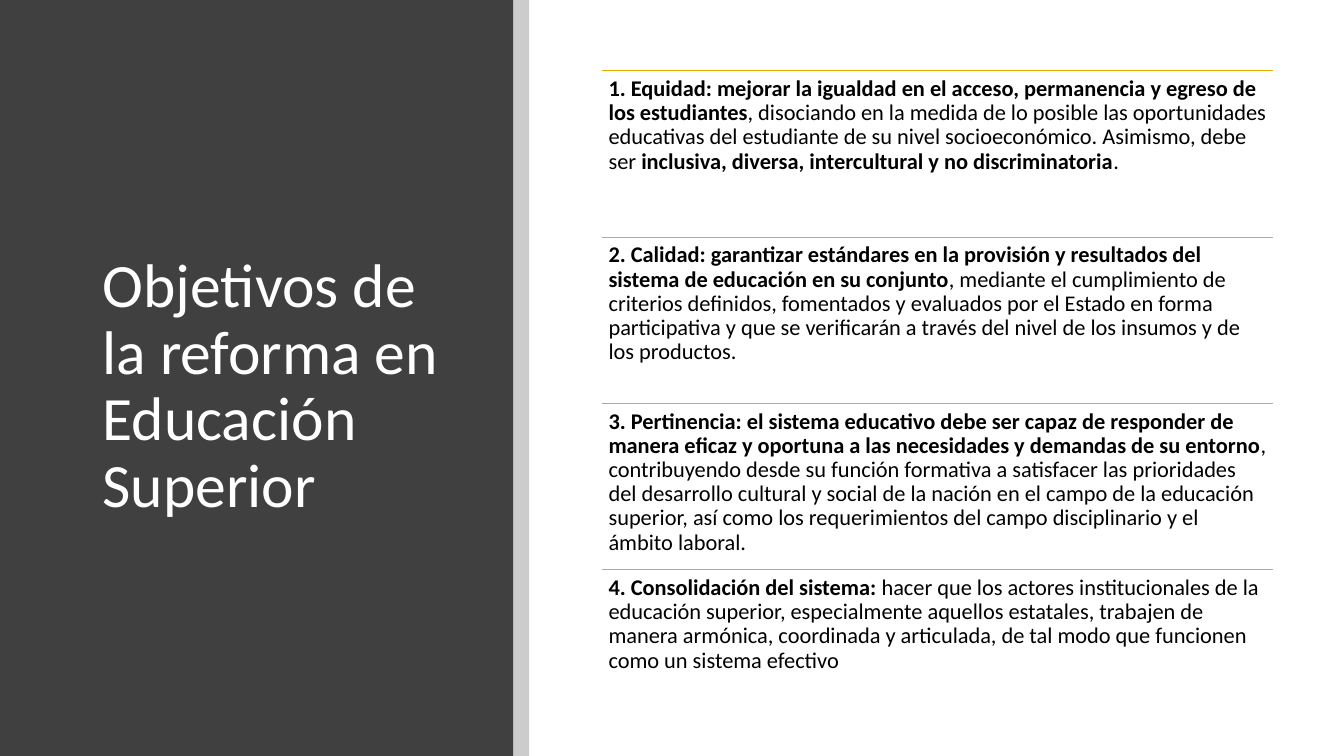
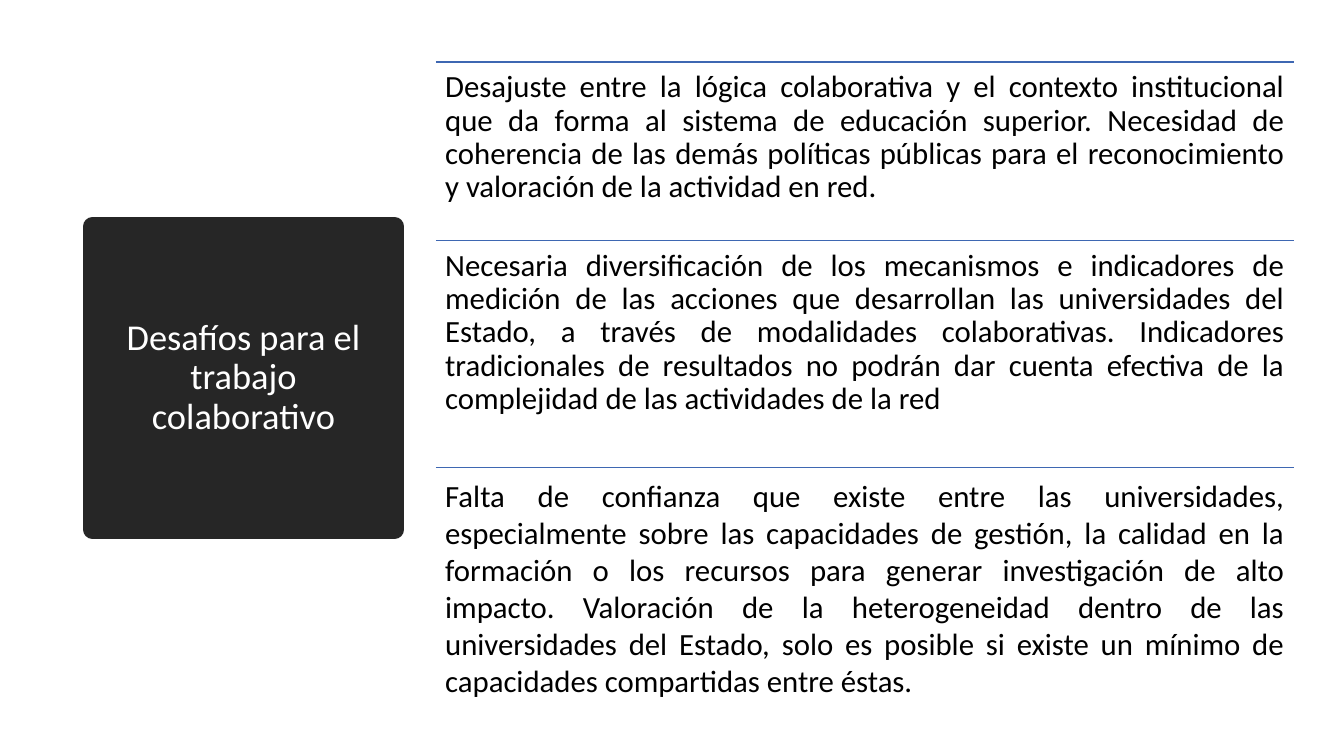
from lxml import etree
from pptx import Presentation
from pptx import util as u
from pptx.dml.color import RGBColor
from pptx.enum import shapes, text
from pptx.oxml import ns

WHITE = RGBColor(0xFF, 0xFF, 0xFF)
BLACK = RGBColor(0x00, 0x00, 0x00)
CHARCOAL = RGBColor(0x40, 0x40, 0x40)
INK = RGBColor(0x26, 0x26, 0x26)
GOLD = RGBColor(0xE7, 0xAE, 0x00)
BLUE = RGBColor(0x3E, 0x67, 0xB2)

COLUMNS, ROWS = 160, 90
FONT = "Calibri"
TITLE_ONLY = 5

GOALS = [
    "**1. Equidad: mejorar la igualdad en el acceso, permanencia y egreso de los "
    "estudiantes**, disociando en la medida de lo posible las oportunidades educativas "
    "del estudiante de su nivel socioeconómico. Asimismo, debe ser **inclusiva, diversa, "
    "intercultural y no discriminatoria**.",
    "**2. Calidad: garantizar estándares en la provisión y resultados del sistema de "
    "educación en su conjunto**, mediante el cumplimiento de criterios definidos, "
    "fomentados y evaluados por el Estado en forma participativa y que se verificarán a "
    "través del nivel de los insumos y de los productos.",
    "**3. Pertinencia: el sistema educativo debe ser capaz de responder de manera eficaz "
    "y oportuna a las necesidades y demandas de su entorno**, contribuyendo desde su "
    "función formativa a satisfacer las prioridades del desarrollo cultural y social de "
    "la nación en el campo de la educación superior, así como los requerimientos del "
    "campo disciplinario y el ámbito laboral.",
    "**4. Consolidación del sistema: **hacer que los actores institucionales de la "
    "educación superior, especialmente aquellos estatales, trabajen de manera armónica, "
    "coordinada y articulada, de tal modo que funcionen como un sistema efectivo",
]

CHALLENGES = [
    ("Desajuste entre la lógica colaborativa y el contexto institucional que da forma al "
     "sistema de educación superior. Necesidad de coherencia de las demás políticas "
     "públicas para el reconocimiento y valoración de la actividad en red.", 21.25, 0.9),
    ("Necesaria diversificación de los mecanismos e indicadores de medición de las "
     "acciones que desarrollan las universidades del Estado, a través de modalidades "
     "colaborativas. Indicadores tradicionales de resultados no podrán dar cuenta "
     "efectiva de la complejidad de las actividades de la red", 27, 0.9),
    ("Falta de confianza que existe entre las universidades, especialmente sobre las "
     "capacidades de gestión, la calidad en la formación o los recursos para generar "
     "investigación de alto impacto. Valoración de la heterogeneidad dentro de las "
     "universidades del Estado, solo es posible si existe un mínimo de capacidades "
     "compartidas entre éstas.", 30.75, 1.0),
]


class Slides:
    def __init__(self):
        self.deck = Presentation()
        self.deck.slide_width = u.Inches(13.33)
        self.deck.slide_height = u.Inches(7.5)
        self.page = None

    def new_page(self):
        layout = self.deck.slide_layouts[TITLE_ONLY]
        self.page = self.deck.slides.add_slide(layout)

    def across(self, columns):
        return round(self.deck.slide_width * columns / COLUMNS)

    def down(self, rows):
        return round(self.deck.slide_height * rows / ROWS)

    def area(self, left, top, width, height):
        return self.across(left), self.down(top), self.across(width), self.down(height)

    def style(self, span, size, color, bold=False):
        span.font.name = FONT
        span.font.size = u.Pt(size)
        span.font.color.rgb = color
        span.font.bold = bold

    def band(self, left, width, color, opacity=100):
        box = self.page.shapes.add_shape(
            shapes.MSO_SHAPE.RECTANGLE, *self.area(left, 0, width, ROWS))
        box.shadow.inherit = False
        box.line.fill.background()
        box.fill.solid()
        box.fill.fore_color.rgb = color
        if opacity < 100:
            tint = next(box.element.iter(ns.qn("a:srgbClr")))
            etree.SubElement(tint, ns.qn("a:alpha"), val=str(opacity * 1000))

    def title(self, wording, place, size, align, fill=None, border=0):
        box = self.page.shapes.title
        box.left, box.top, box.width, box.height = self.area(*place)
        box.element.getparent().append(box.element)
        if fill is not None:
            box.fill.solid()
            box.fill.fore_color.rgb = fill
            box.line.color.rgb = fill
            box.line.width = u.Pt(border)
        frame = box.text_frame
        frame.text = wording
        frame.word_wrap = True
        frame.auto_size = text.MSO_AUTO_SIZE.NONE
        frame.vertical_anchor = text.MSO_ANCHOR.MIDDLE
        para = frame.paragraphs[0]
        para.alignment = align
        para.line_spacing = 0.9
        self.style(para.runs[0], size, WHITE)

    def rule(self, left, top, width, color, weight):
        x, y = self.across(left), self.down(top)
        line = self.page.shapes.add_connector(
            shapes.MSO_CONNECTOR.STRAIGHT, x, y, x + self.across(width), y)
        line.line.color.rgb = color
        line.line.width = u.Pt(weight)
        etree.SubElement(line.element.spPr, ns.qn("a:effectLst"))

    def passage(self, wording, place, size, align, spacing):
        frame = self.page.shapes.add_textbox(*self.area(*place)).text_frame
        frame.word_wrap = True
        inset = u.Inches(size / 240)
        frame.margin_left = frame.margin_right = inset
        frame.margin_top = frame.margin_bottom = inset
        para = frame.paragraphs[0]
        para.alignment = align
        para.line_spacing = spacing
        for index, part in enumerate(wording.split("**")):
            if part:
                span = para.add_run()
                span.text = part
                self.style(span, size, BLACK, bold=index % 2 == 1)

    def ruled_list(self, items, left, top, width, size, align, color, weight):
        for wording, height, spacing in items:
            self.rule(left, top, width, color, weight)
            self.passage(wording, (left, top, width, height), size, align, spacing)
            top += height


def main():
    left, center, justify = (
        text.PP_ALIGN.LEFT, text.PP_ALIGN.CENTER, text.PP_ALIGN.JUSTIFY)
    slides = Slides()

    slides.new_page()
    slides.band(0, 61.1, CHARCOAL)
    slides.band(61.1, 1.9, BLACK, opacity=20)
    slides.title("Objetivos de la reforma en Educación Superior",
                 (11, 10.7, 43.8, 70.9), 44, left)
    goals = [(goal, 19.8, 0.9) for goal in GOALS]
    slides.ruled_list(goals, 71.65, 8.4, 79.95, 16, left, GOLD, 0.5)

    slides.new_page()
    slides.title("Desafíos para el trabajo colaborativo",
                 (11, 27, 36, 36), 26, center, INK, 13.75)
    slides.ruled_list(CHALLENGES, 51.9, 7.4, 102.1, 22, justify, BLUE, 1)

    slides.deck.save("out.pptx")


if __name__ == "__main__":
    main()
